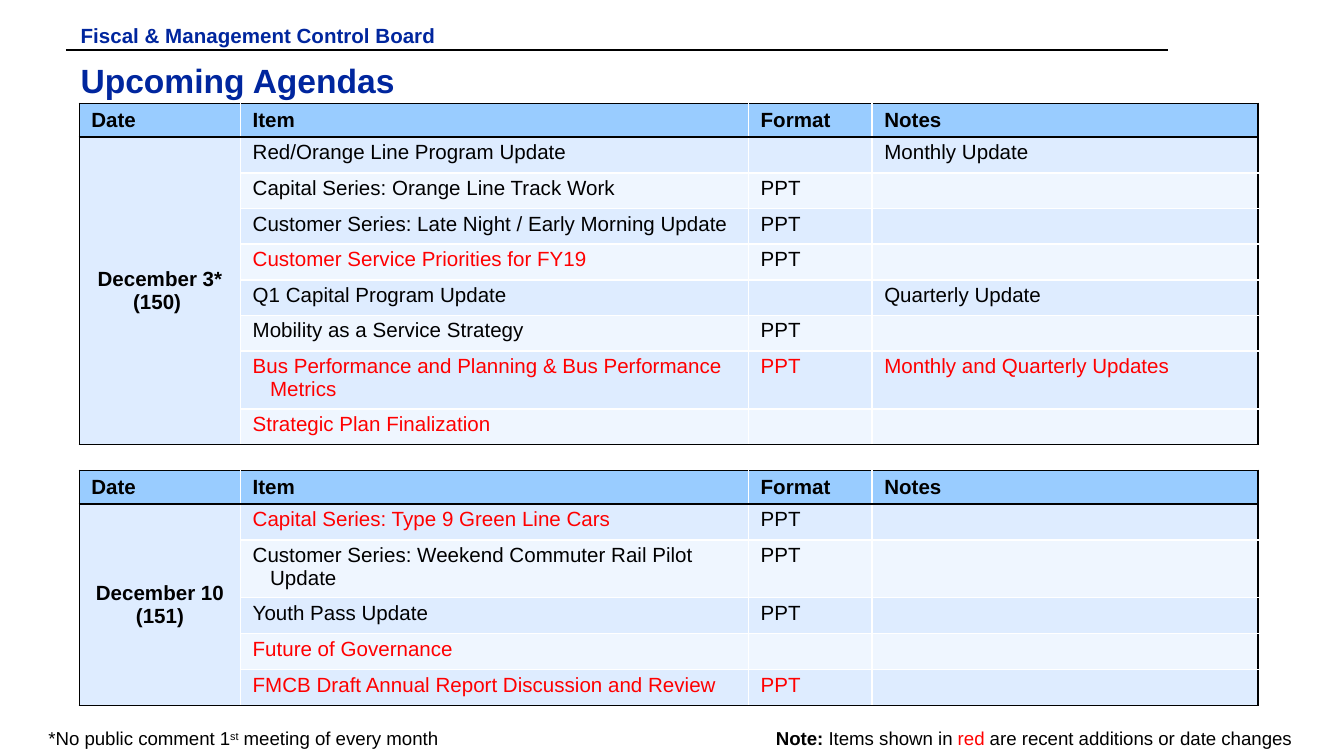
from lxml.etree import SubElement
from pptx import Presentation
from pptx.dml.color import RGBColor
from pptx.enum.shapes import MSO_CONNECTOR
from pptx.enum.text import MSO_ANCHOR, PP_ALIGN
from pptx.oxml.ns import qn
from pptx.util import Inches, Pt

COLOURS = {
    "navy": "00269E", "black": "000000", "white": "FFFFFF", "red": "FF0000",
    "header": "99CCFF", "odd": "DEECFF", "even": "EFF6FF",
}
FONT = "Arial"
TABLE_LEFT = 0.59
COLUMNS = [1.2, 3.78, 0.92, 2.87]
HEADINGS = ["Date", "Item", "Format", "Notes"]
HEADER_HEIGHT, TALL_HEIGHT = 0.25, 0.43

# Each text box: left, top, width, height, top inset, size, alignment, runs.
# Each run: text, colour, bold, raised.
TEXTS = [
    (0.51, 0.4, 8.36, 0.48, 0.05, 18, PP_ALIGN.LEFT,
     [("Upcoming Agendas", "navy", True, False)]),
    (0.51, 0.12, 3.41, 0.19, 0.05, 11, PP_ALIGN.LEFT,
     [("Fiscal & Management Control Board", "navy", True, False)]),
    (0.27, 5.37, 4.16, 0.26, 0.04, 10, PP_ALIGN.LEFT,
     [("*No public comment 1", "black", False, False),
      ("st", "black", False, True),
      (" meeting of every month", "black", False, False)]),
    (5.5, 5.37, 4.2, 0.26, 0.04, 10, PP_ALIGN.RIGHT,
     [("Note: ", "black", True, False),
      ("Items shown in ", "black", False, False),
      ("red", "red", False, False),
      (" are recent additions or date changes", "black", False, False)]),
]

# Each agenda: top, height, index of the two-line row, date, items.
# Each item: item, format, notes, and the last column shown in red (0 for none).
AGENDAS = [
    (0.77, 2.54, 7, "December 3* (150) ", [
        ("Red/Orange Line Program Update", "", "Monthly Update", 0),
        ("Capital Series: Orange Line Track Work", "PPT", "", 0),
        ("Customer Series: Late Night / Early Morning Update", "PPT", "", 0),
        ("Customer Service Priorities for FY19", "PPT", "", 1),
        ("Q1 Capital Program Update", "", "Quarterly Update", 0),
        ("Mobility as a Service Strategy", "PPT", "", 0),
        ("Bus Performance and Planning & Bus Performance Metrics", "PPT",
         "Monthly and Quarterly Updates", 3),
        ("Strategic Plan Finalization", "", "", 1),
    ]),
    (3.5, 1.75, 2, "December 10 (151)", [
        ("Capital Series: Type 9 Green Line Cars", "PPT", "", 1),
        ("Customer Series: Weekend Commuter Rail Pilot Update", "PPT", "", 0),
        ("Youth Pass Update", "PPT", "", 0),
        ("Future of Governance", "", "", 1),
        ("FMCB Draft Annual Report Discussion and Review", "PPT", "", 2),
    ]),
]


def format_font(font, size, colour, bold):
    font.name, font.size, font.bold = FONT, Pt(size), bold
    font.color.rgb = RGBColor.from_string(COLOURS[colour])


def set_borders(cell, black_sides):
    """Draw the listed sides (L, R, T, B) black and the others white."""
    properties = cell._tc.get_or_add_tcPr()
    for side in "LRTB":
        line = SubElement(properties, qn(f"a:ln{side}"), w=str(Pt(1)))
        fill = SubElement(line, qn("a:solidFill"))
        colour = "black" if side in black_sides else "white"
        SubElement(fill, qn("a:srgbClr"), val=COLOURS[colour])


presentation = Presentation()
presentation.slide_width = Inches(10)
presentation.slide_height = presentation.slide_width * 9 // 16
slide = presentation.slides.add_slide(presentation.slide_layouts[6])

rule = slide.shapes.add_connector(
    MSO_CONNECTOR.STRAIGHT, Inches(0.49), Inches(0.37), Inches(8.69), Inches(0.37))
rule.line.color.rgb = RGBColor.from_string(COLOURS["black"])
rule.line.width = Pt(1)
SubElement(rule._element.spPr, qn("a:effectLst"))

for left, top, width, height, inset, size, alignment, runs in TEXTS:
    box = slide.shapes.add_textbox(
        Inches(left), Inches(top), Inches(width), Inches(height))
    frame = box.text_frame
    frame.word_wrap = True
    frame.margin_left = frame.margin_right = Inches(0.09)
    frame.margin_top, frame.margin_bottom = Inches(inset), Inches(0.04)
    paragraph = frame.paragraphs[0]
    paragraph.alignment = alignment
    for text, colour, bold, raised in runs:
        run = paragraph.add_run()
        run.text = text
        format_font(run.font, size, colour, bold)
        if raised:
            run.font._element.set("baseline", "30000")

for top, height, tall_row, date, items in AGENDAS:
    last_row, last_column = len(items), len(COLUMNS) - 1
    table = slide.shapes.add_table(
        last_row + 1, len(COLUMNS), Inches(TABLE_LEFT), Inches(top),
        Inches(sum(COLUMNS)), Inches(height)).table
    for column, width in zip(table.columns, COLUMNS):
        column.width = Inches(width)
    row_height = (height - HEADER_HEIGHT - TALL_HEIGHT) / (last_row - 1)
    for row in table.rows:
        row.height = Inches(row_height)
    table.rows[0].height = Inches(HEADER_HEIGHT)
    table.rows[tall_row].height = Inches(TALL_HEIGHT)
    table.cell(1, 0).merge(table.cell(last_row, 0))

    rows = [HEADINGS] + [[date if number == 0 else "", *item[:3]]
                         for number, item in enumerate(items)]
    for r, texts in enumerate(rows):
        for c, text in enumerate(texts):
            cell = table.cell(r, c)
            sides = {"L": c == 0, "R": c == last_column, "T": r <= 1,
                     "B": r in (0, last_row) or c == 0}
            set_borders(cell, [side for side, black in sides.items() if black])
            shade = "header" if r == 0 else "odd" if r % 2 or c == 0 else "even"
            cell.fill.solid()
            cell.fill.fore_color.rgb = RGBColor.from_string(COLOURS[shade])
            cell.margin_left = cell.margin_right = Inches(0.09)
            cell.margin_top = cell.margin_bottom = Inches(0.03)
            strong = r == 0 or c == 0
            cell.vertical_anchor = MSO_ANCHOR.MIDDLE if strong else MSO_ANCHOR.TOP
            paragraph = cell.text_frame.paragraphs[0]
            paragraph.text = text
            if c == 0 and r > 0:
                paragraph.alignment = PP_ALIGN.CENTER
            if c == 1:
                indent = paragraph._p.get_or_add_pPr()
                indent.set("marL", str(Inches(0.13)))
                indent.set("indent", str(-Inches(0.13)))
            is_red = r > 0 and 1 <= c <= items[r - 1][3]
            for run in paragraph.runs:
                format_font(run.font, 11, "red" if is_red else "black", strong)
            if not text:  # keeps empty cells from stretching their row
                SubElement(paragraph._p, qn("a:endParaRPr"), sz="1100")

presentation.save("out.pptx")
